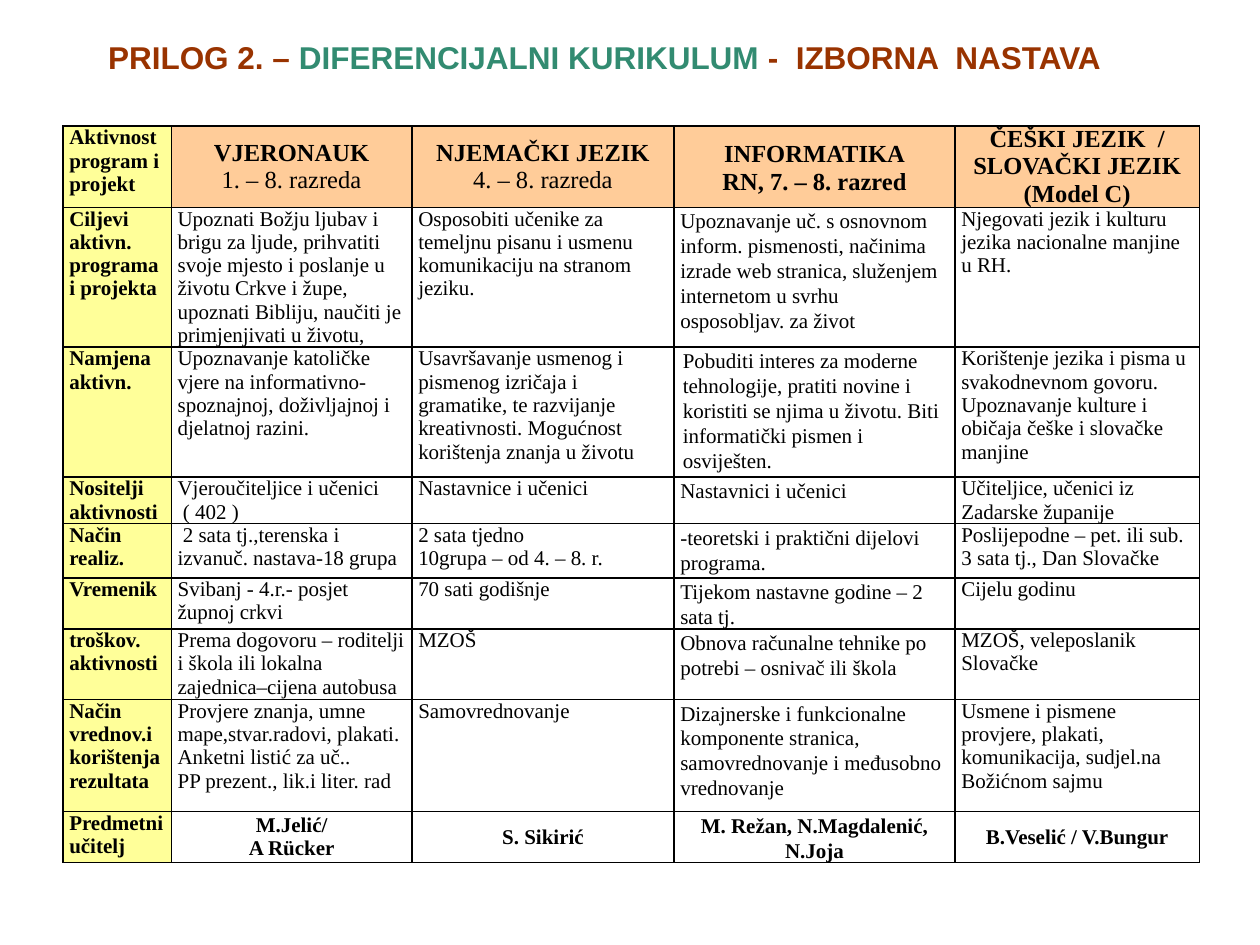
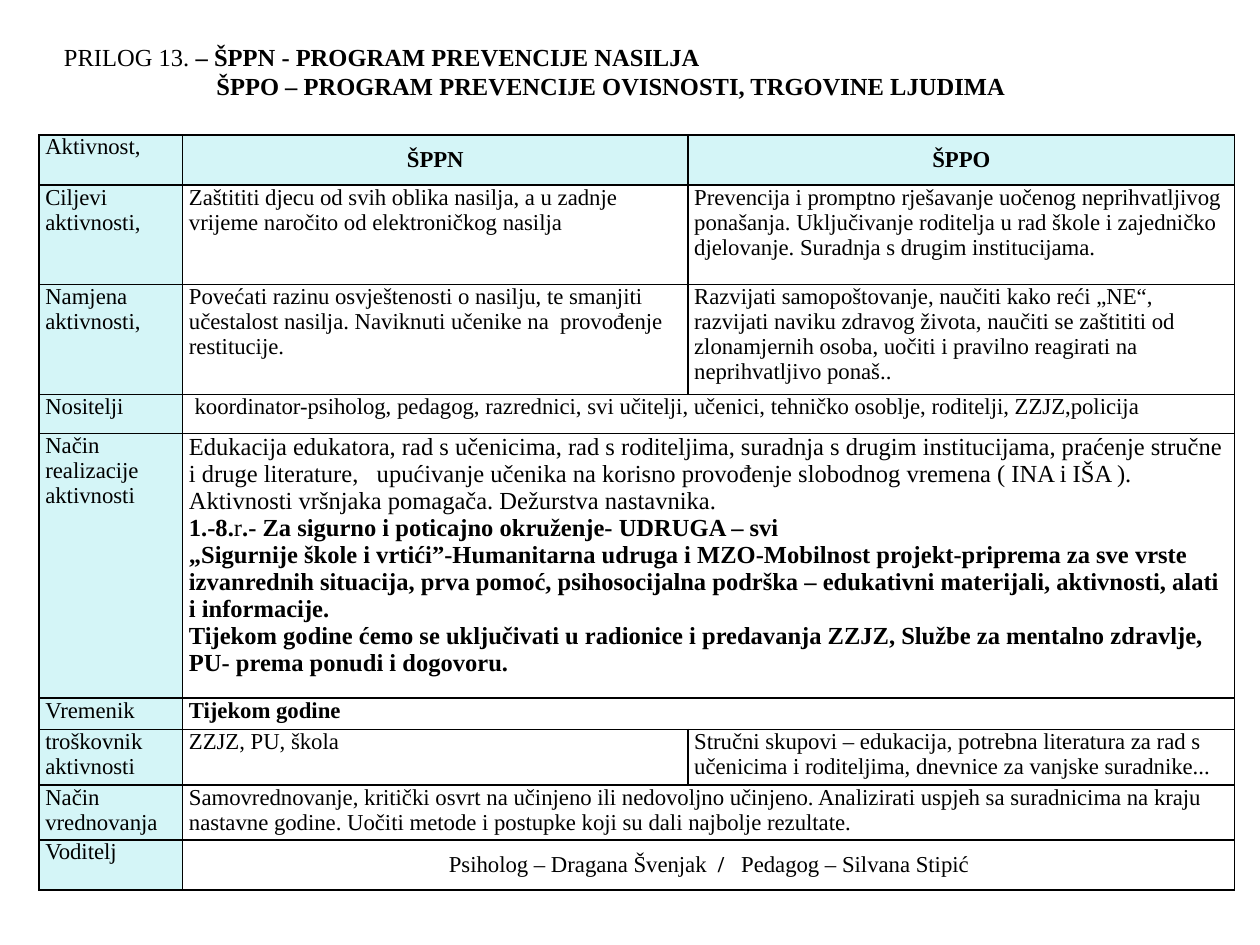
from lxml import etree
from pptx import Presentation
from pptx.dml.color import RGBColor
from pptx.enum.text import MSO_ANCHOR, PP_ALIGN
from pptx.oxml.ns import qn
from pptx.util import Inches, Pt

SERIF, SANS = "Times New Roman", "Arial"
BLACK, RUST, GREEN = "000000", "993300", "328B71"
YELLOW, PEACH, ICE = "FFFF99", "FFCC99", "D4F5F7"

# Text between ** marks is emphasised; a line break starts a new paragraph.
ELECTIVE_ROWS = [
    ["Aktivnost program i projekt", "**VJERONAUK**\n1. – 8. razreda",
     "**NJEMAČKI JEZIK**\n4. – 8. razreda",
     "**INFORMATIKA**\n**RN, 7. – 8. razred**",
     "**ČEŠKI JEZIK  / SLOVAČKI JEZIK**\n**(Model C)**"],
    ["Ciljevi aktivn. programa i projekta",
     "Upoznati Božju ljubav i brigu za ljude, prihvatiti svoje mjesto i poslanje "
     "u životu Crkve i župe, upoznati Bibliju, naučiti je primjenjivati u životu,",
     "Osposobiti učenike za temeljnu pisanu i usmenu komunikaciju na stranom jeziku.",
     "Upoznavanje uč. s osnovnom inform. pismenosti, načinima izrade web stranica, "
     "služenjem internetom u svrhu  osposobljav. za život",
     "Njegovati jezik i kulturu jezika nacionalne manjine u RH."],
    ["Namjena aktivn.",
     "Upoznavanje katoličke vjere na informativno-spoznajnoj, doživljajnoj i "
     "djelatnoj razini.",
     "Usavršavanje usmenog i pismenog izričaja i gramatike, te razvijanje "
     "kreativnosti. Mogućnost korištenja znanja u životu",
     "Pobuditi interes za moderne tehnologije, pratiti novine i koristiti se njima "
     "u životu. Biti informatički pismen i osviješten.",
     "Korištenje jezika i pisma u svakodnevnom govoru. Upoznavanje kulture i "
     "običaja češke i slovačke manjine"],
    ["Nositelji aktivnosti", "Vjeroučiteljice i učenici\n ( 402 )",
     "Nastavnice i učenici", "Nastavnici i učenici",
     "Učiteljice, učenici iz Zadarske županije"],
    ["Način realiz.", " 2 sata tj.,terenska i izvanuč. nastava-18 grupa",
     "2 sata tjedno\n10grupa – od 4. – 8. r.",
     "-teoretski i praktični dijelovi programa.",
     "Poslijepodne – pet. ili sub.\n3 sata tj., Dan Slovačke"],
    ["Vremenik", "Svibanj - 4.r.- posjet župnoj crkvi", "70 sati godišnje",
     "Tijekom nastavne godine – 2 sata tj.", "Cijelu godinu"],
    ["troškov. aktivnosti",
     "Prema dogovoru – roditelji i škola ili lokalna zajednica–cijena autobusa",
     "MZOŠ", "Obnova računalne tehnike po potrebi – osnivač ili škola",
     "MZOŠ, veleposlanik Slovačke"],
    ["Način vrednov.i korištenja rezultata",
     "Provjere znanja, umne mape,stvar.radovi, plakati.\nAnketni listić za uč..\n"
     "PP prezent., lik.i liter. rad",
     "Samovrednovanje",
     "Dizajnerske i funkcionalne komponente stranica, samovrednovanje i međusobno "
     "vrednovanje",
     "Usmene i pismene provjere, plakati, komunikacija, sudjel.na Božićnom sajmu"],
    ["Predmetni učitelj", "M.Jelić/\nA Rücker", "S. Sikirić",
     "M. Režan, N.Magdalenić, N.Joja", "B.Veselić / V.Bungur"],
]

# A row with two entries spans both programme columns.
PREVENTION_ROWS = [
    ["Aktivnost,", "**ŠPPN**", "**ŠPPO**"],
    ["Ciljevi aktivnosti,",
     "Zaštititi djecu od svih oblika nasilja, a u zadnje vrijeme naročito od "
     "elektroničkog nasilja",
     "Prevencija i promptno rješavanje uočenog neprihvatljivog ponašanja. "
     "Uključivanje roditelja u rad škole i zajedničko djelovanje. Suradnja s drugim "
     "institucijama."],
    ["Namjena aktivnosti,",
     "Povećati razinu osvještenosti o nasilju, te smanjiti učestalost nasilja. "
     "Naviknuti učenike na  provođenje restitucije.",
     "Razvijati samopoštovanje, naučiti kako reći „NE“, razvijati naviku zdravog "
     "života, naučiti se zaštititi od zlonamjernih osoba, uočiti i pravilno "
     "reagirati na neprihvatljivo ponaš.."],
    ["Nositelji",
     " koordinator-psiholog, pedagog, razrednici, svi učitelji, učenici, tehničko "
     "osoblje, roditelji, ZZJZ,policija"],
    ["Način realizacije aktivnosti",
     "Edukacija edukatora, rad s učenicima, rad s roditeljima, suradnja s drugim "
     "institucijama, praćenje stručne i druge literature,   upućivanje učenika na "
     "korisno provođenje slobodnog vremena ( INA i IŠA ). Aktivnosti vršnjaka "
     "pomagača. Dežurstva nastavnika.\n"
     "**1.-8.**r**.- Za sigurno i poticajno okruženje- UDRUGA – svi**\n"
     "**„Sigurnije škole i vrtići”-Humanitarna udruga i MZO-Mobilnost "
     "projekt-priprema za sve vrste izvanrednih situacija, prva pomoć, psihosocijalna "
     "podrška – edukativni materijali, aktivnosti, alati i informacije.**\n"
     "**Tijekom godine ćemo se uključivati u radionice i predavanja ZZJZ, Službe za "
     "mentalno zdravlje, PU- prema ponudi i dogovoru.**"],
    ["Vremenik", "**Tijekom godine**"],
    ["troškovnik aktivnosti", "ZZJZ, PU, škola",
     "Stručni skupovi – edukacija, potrebna literatura za rad s učenicima i "
     "roditeljima, dnevnice za vanjske suradnike..."],
    ["Način vrednovanja",
     "Samovrednovanje, kritički osvrt na učinjeno ili nedovoljno učinjeno. "
     "Analizirati uspjeh sa suradnicima na kraju nastavne godine. Uočiti metode i "
     "postupke koji su dali najbolje rezultate."],
    ["Voditelj", "Psiholog – Dragana Švenjak**  /   **Pedagog – Silvana Stipić"],
]


def color(value):
    return RGBColor.from_string(value)


def write_text(frame, text, size=12, font=SERIF, fill=BLACK, bold=False,
               centered=False, spacing=None, emphasis=None):
    """Fill a text frame; emphasis gives the format of marked parts."""
    for number, line in enumerate(text.split("\n")):
        paragraph = frame.add_paragraph() if number else frame.paragraphs[0]
        paragraph.alignment = PP_ALIGN.CENTER if centered else PP_ALIGN.LEFT
        if spacing:
            paragraph.line_spacing = spacing
        for index, part in enumerate(line.split("**")):
            if not part:
                continue
            style = {"bold": bold, "fill": fill}
            if index % 2:
                style.update(emphasis or {"bold": True})
            run = paragraph.add_run()
            run.text = part
            run.font.size = Pt(size)
            run.font.name = font
            run.font.bold = style["bold"]
            run.font.color.rgb = color(style["fill"])


class Deck:
    """Holds the shared style and the current slide."""

    def __init__(self):
        self.presentation = Presentation()
        self.presentation.slide_width = Inches(10)
        self.presentation.slide_height = Inches(7.5)
        self.slide = None

    def add_slide(self):
        self.slide = self.presentation.slides.add_slide(
            self.presentation.slide_layouts[6])

    def add_title(self, text, left, top, width, height, **style):
        box = self.slide.shapes.add_textbox(
            Inches(left), Inches(top), Inches(width), Inches(height))
        frame = box.text_frame
        frame.word_wrap = True
        frame.vertical_anchor = MSO_ANCHOR.MIDDLE
        write_text(frame, text, **style)
        return frame

    def add_grid(self, left, top, widths, heights):
        table = self.slide.shapes.add_table(
            len(heights), len(widths), Inches(left), Inches(top),
            Inches(sum(widths)), Inches(sum(heights))).table
        table.first_row = table.horz_banding = False
        for column, width in zip(table.columns, widths):
            column.width = Inches(width)
        for row, height in zip(table.rows, heights):
            row.height = Inches(height)
        for cell in table.iter_cells():
            self.outline(cell)
        return table

    def outline(self, cell):
        properties = cell._tc.get_or_add_tcPr()
        for side in ("lnL", "lnR", "lnT", "lnB"):
            line = etree.SubElement(properties, qn(f"a:{side}"), w=str(Pt(1)))
            fill = etree.SubElement(line, qn("a:solidFill"))
            etree.SubElement(fill, qn("a:srgbClr"), val=BLACK)

    def fill_cell(self, cell, text, background=None, side=0.05, top=0,
                  centered=False, **style):
        if background:
            cell.fill.solid()
            cell.fill.fore_color.rgb = color(background)
        else:
            cell.fill.background()
        cell.margin_left = cell.margin_right = Inches(side)
        cell.margin_top, cell.margin_bottom = Inches(top), 0
        cell.vertical_anchor = MSO_ANCHOR.MIDDLE if centered else MSO_ANCHOR.TOP
        write_text(cell.text_frame, text, centered=centered, **style)


def build_electives(deck):
    deck.add_slide()
    table = deck.add_grid(0.5, 1, [0.86, 1.91, 2.08, 2.23, 1.94],
                          [0.64, 1.11, 1.03, 0.37, 0.43, 0.4, 0.56, 0.89, 0.4])
    teachers, informatics = len(ELECTIVE_ROWS) - 1, 3
    for row, texts in enumerate(ELECTIVE_ROWS):
        for column, text in enumerate(texts):
            label, header = column == 0, row == 0
            style = {"bold": label or row == teachers,
                     "centered": not label and row in (0, teachers)}
            if label:
                style["background"] = YELLOW
            elif header:
                style.update(background=PEACH, size=14)
            if column == informatics:
                style.update(top=0.01, spacing=1.07,
                             side=0.07 if row in (2, teachers) else 0.05)
            deck.fill_cell(table.cell(row, column), text, **style)
    deck.add_title("PRILOG 2. – **DIFERENCIJALNI KURIKULUM **-  IZBORNA  NASTAVA",
                   0.76, 0.25, 8.4, 0.4, size=18, font=SANS, fill=RUST, bold=True,
                   emphasis={"fill": GREEN})


def build_prevention(deck):
    deck.add_slide()
    frame = deck.add_title(
        "PRILOG 13. **– ŠPPN - PROGRAM PREVENCIJE NASILJA**\n"
        "**ŠPPO – PROGRAM PREVENCIJE OVISNOSTI, TRGOVINE LJUDIMA**",
        0.41, 0.29, 9.2, 0.55, size=14)
    second_line = frame.paragraphs[1]._p.get_or_add_pPr()
    second_line.set("marL", str(Inches(1.21)))
    table = deck.add_grid(0.31, 1.07, [1.14, 4.01, 4.34],
                          [0.4, 0.79, 0.87, 0.31, 2.1, 0.25, 0.44, 0.43, 0.4])
    realisation, leader = 4, len(PREVENTION_ROWS) - 1
    for row, texts in enumerate(PREVENTION_ROWS):
        if len(texts) == 2:
            table.cell(row, 1).merge(table.cell(row, 2))
        for column, text in enumerate(texts):
            label = column == 0
            deck.fill_cell(
                table.cell(row, column), text,
                background=ICE if label or row == 0 else None,
                centered=not label and row in (0, leader),
                size=14 if not label and row == realisation else 13)


def main():
    deck = Deck()
    build_electives(deck)
    build_prevention(deck)
    deck.presentation.save("out.pptx")


if __name__ == "__main__":
    main()
